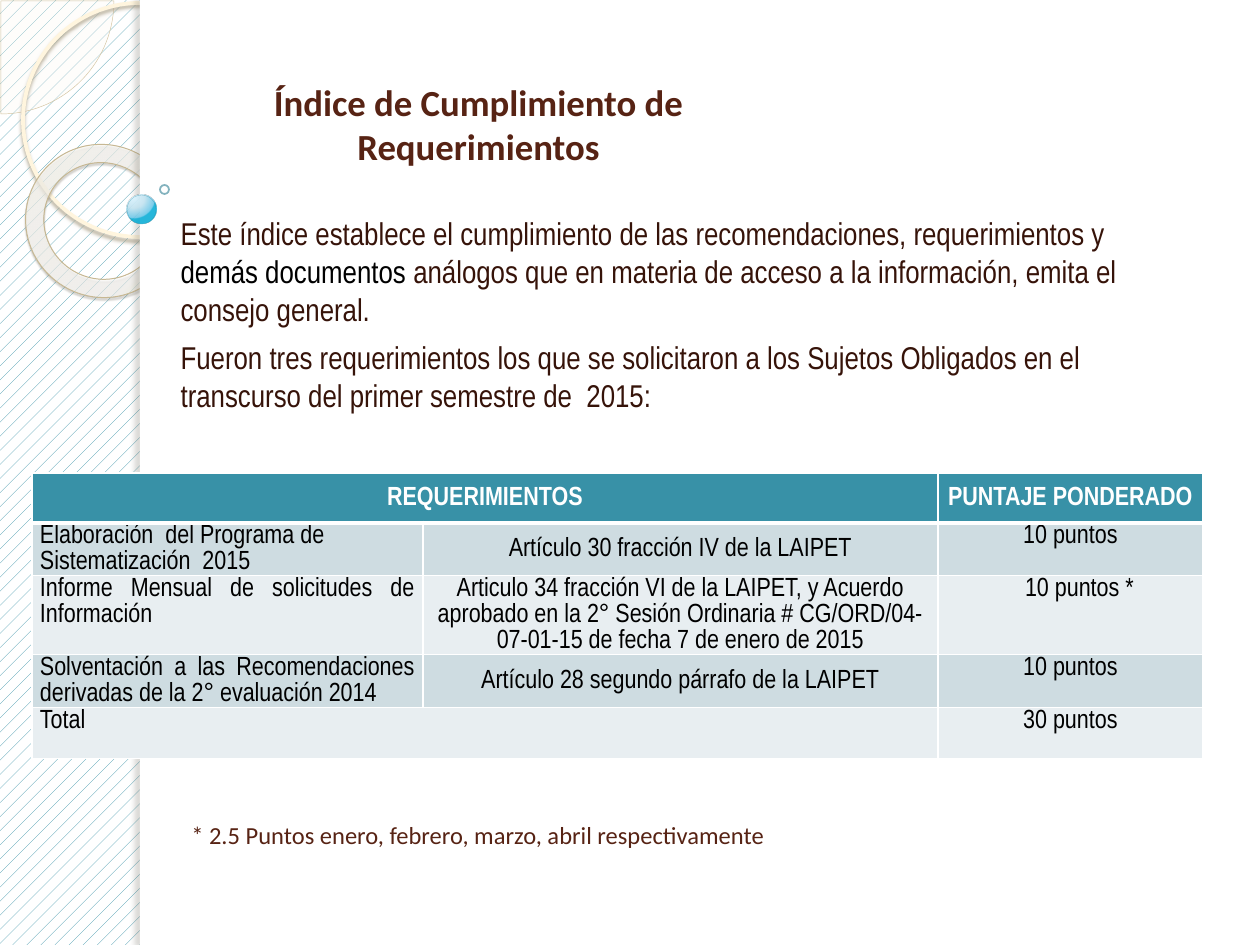
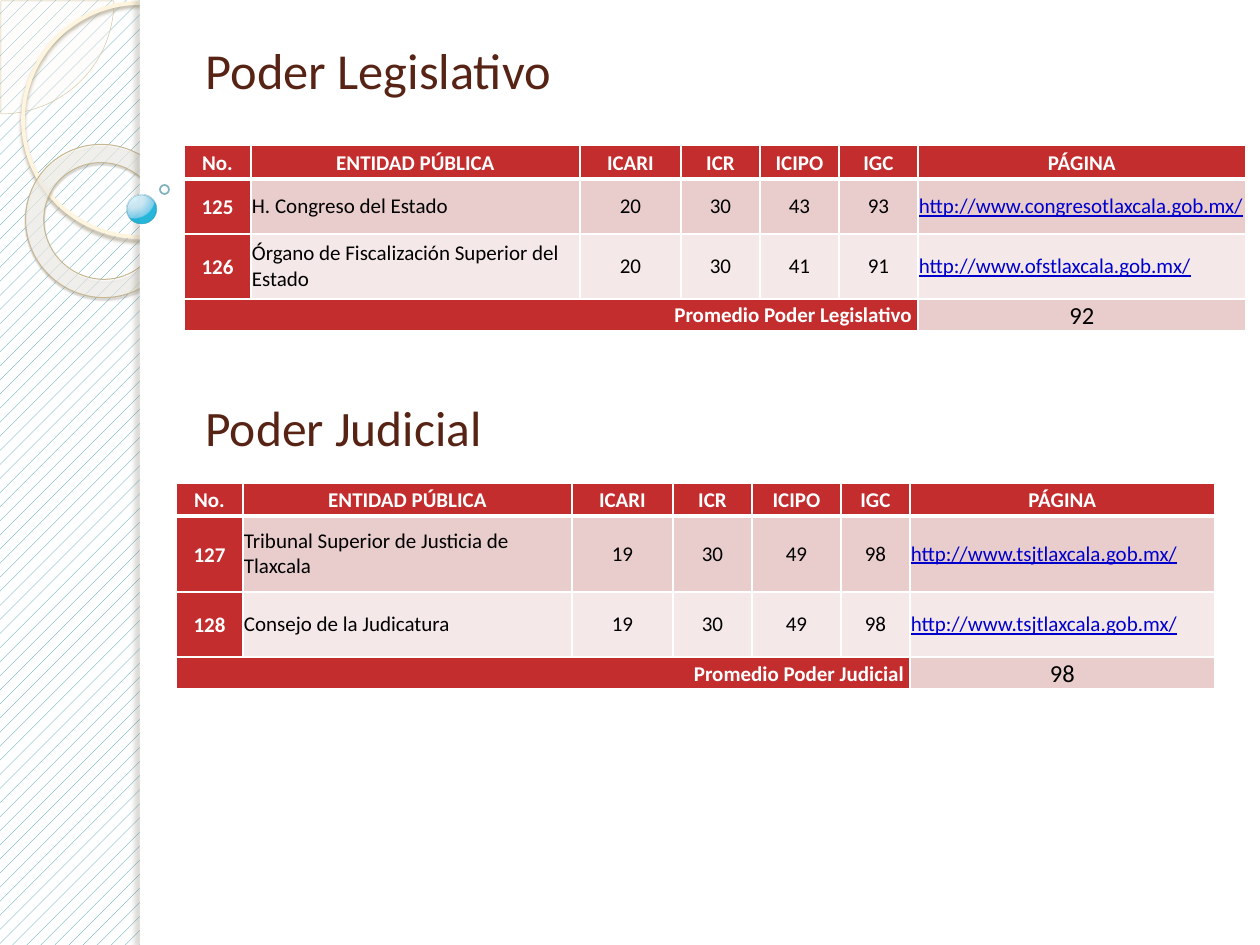
"""Build two slides on the compliance index and the scores of two branches of government."""
from lxml.etree import SubElement
from pptx import Presentation
from pptx.dml.color import RGBColor
from pptx.enum.dml import MSO_PATTERN
from pptx.enum.shapes import MSO_SHAPE
from pptx.enum.text import MSO_ANCHOR, MSO_AUTO_SIZE, PP_ALIGN
from pptx.oxml import parse_xml
from pptx.oxml.ns import nsdecls, qn
from pptx.util import Pt

SCALE = 914400 / 126
BROWN, DARK_BROWN, BLACK, WHITE = "572314", "361309", "000000", "FFFFFF"
TEAL, RED, LINK = "3891A7", "C32D2E", "0000CC"
TEAL_BANDS, RED_BANDS = ("CEDCE1", "E8EEF1"), ("E9CDCD", "F5E8E8")
NARROW, SANS = "Arial Narrow", "Calibri"
TABLE_SPACING = 1.07
LEFT, CENTER, RIGHT, JUSTIFY = PP_ALIGN.LEFT, PP_ALIGN.CENTER, PP_ALIGN.RIGHT, PP_ALIGN.JUSTIFY
TOP, MIDDLE, BOTTOM = MSO_ANCHOR.TOP, MSO_ANCHOR.MIDDLE, MSO_ANCHOR.BOTTOM

DECORATIONS = [
    dict(kind=MSO_SHAPE.PIE, box=(-112, -112, 226, 226), adjust=(0, 54.02),
         fill="FEFAF4", opacity=33, line=("D3C39F", 0.25, 100)),
    dict(kind=MSO_SHAPE.OVAL, box=(23, 3, 234, 234), line=("FFF5DE", 2.15, 100),
         shadow=("B0A68F", 85, 2, 2, 90)),
    dict(kind=MSO_SHAPE.DONUT, box=(25, 145, 155, 152), adjust=(0.12,), rotation=38.6,
         gradient=[(0, "FFFCF6", 70), (70, "FFFEFB", 55), (100, "F0D28E", 60)],
         focus=(-408, -50, 508, 150), line=("C7B893", 0.58, 100),
         shadow=("5A5444", 35, 1, 1.2, 75)),
    dict(kind=MSO_SHAPE.RECTANGLE, box=(140, 0, 1120, 945), fill=WHITE),
    dict(kind=MSO_SHAPE.RECTANGLE, box=(140, 0, 10, 945), fill=WHITE,
         shadow=("736F63", 25, 3, 3, 180)),
    dict(kind=MSO_SHAPE.OVAL, box=(127, 195, 29, 29),
         gradient=[(0, "DAF4FF", 95), (50, "C3E3F0", 90), (95, "6BC7E8", 88), (100, "00ABD5", 85)],
         focus=(25, 12, 75, 88), line=("308EA5", 0.16, 60)),
    dict(kind=MSO_SHAPE.OVAL, box=(160, 185, 9, 9), line=("318093", 1, 60)),
]

INDEX_TITLE = "Índice de Cumplimiento de Requerimientos"
INDEX_BODY = [
    [("Este índice establece el cumplimiento de las recomendaciones, requerimientos y ", DARK_BROWN),
     ("demás documentos ", BLACK),
     ("análogos que en materia de acceso a la información, emita el consejo general.", DARK_BROWN)],
    [("Fueron tres requerimientos los que se solicitaron a los Sujetos Obligados en el "
      "transcurso del primer semestre de  2015:", DARK_BROWN)],
]
REQUIREMENTS = [
    ("REQUERIMIENTOS", None, "PUNTAJE PONDERADO"),
    ("Elaboración  del Programa de Sistematización  2015",
     "Artículo 30 fracción IV de la LAIPET", "10 puntos"),
    ("Informe Mensual de solicitudes de Información",
     "Articulo 34 fracción VI de la LAIPET, y Acuerdo aprobado en la 2° Sesión Ordinaria "
     "# CG/ORD/04-07-01-15 de fecha 7 de enero de 2015", "10 puntos *"),
    ("Solventación a las Recomendaciones derivadas de la 2° evaluación 2014",
     "Artículo 28 segundo párrafo de la LAIPET", "10 puntos"),
    ("Total", None, "30 puntos"),
]
FOOTNOTE = "* 2.5 Puntos enero, febrero, marzo, abril respectivamente"

SCORE_HEADER = ("No.", "ENTIDAD PÚBLICA", "ICARI", "ICR", "ICIPO", "IGC", "PÁGINA")
BRANCHES = [
    dict(title="Poder Legislativo", title_top=27, size=28.8, place=(184, 145),
         widths=(67, 329, 101, 79, 79, 79, 328), heights=(34, 55, 65, 32), average="92",
         entities=[
             ("125", "H. Congreso del Estado", "20", "30", "43", "93",
              "http://www.congresotlaxcala.gob.mx/"),
             ("126", "Órgano de Fiscalización Superior del Estado", "20", "30", "41", "91",
              "http://www.ofstlaxcala.gob.mx/")]),
    dict(title="Poder Judicial", title_top=384, size=28.3, place=(176, 483),
         widths=(67, 329, 101, 79, 89, 69, 305), heights=(33, 76, 65, 32), average="98",
         entities=[
             ("127", "Tribunal Superior de Justicia de Tlaxcala", "19", "30", "49", "98",
              "http://www.tsjtlaxcala.gob.mx/"),
             ("128", "Consejo de la Judicatura", "19", "30", "49", "98",
              "http://www.tsjtlaxcala.gob.mx/")]),
]


def px(length):
    return round(length * SCALE)


def color(value):
    return RGBColor.from_string(value)


def color_xml(value, opacity):
    return f'<a:srgbClr val="{value}"><a:alpha val="{opacity * 1000}"/></a:srgbClr>'


def gradient_xml(stops, focus):
    stop_list = "".join(f'<a:gs pos="{position * 1000}">{color_xml(value, opacity)}</a:gs>'
                        for position, value, opacity in stops)
    sides = " ".join(f'{side}="{percent * 1000}"' for side, percent in zip("ltrb", focus))
    return (f'<a:gradFill {nsdecls("a")} rotWithShape="1"><a:gsLst>{stop_list}</a:gsLst>'
            f'<a:path path="circle"><a:fillToRect {sides}/></a:path></a:gradFill>')


def shadow_xml(value, opacity, blur, distance, direction):
    return (f'<a:outerShdw {nsdecls("a")} blurRad="{Pt(blur)}" dist="{Pt(distance)}" '
            f'dir="{direction * 60000}" algn="tl" rotWithShape="0">'
            f'{color_xml(value, opacity)}</a:outerShdw>')


def set_opacity(fill_parent, opacity):
    rgb = fill_parent.find(".//" + qn("a:srgbClr"))
    SubElement(rgb, qn("a:alpha")).set("val", str(opacity * 1000))


def draw_decoration(slide, kind, box, adjust=(), rotation=0, fill=None, opacity=100,
                    gradient=None, focus=None, line=None, shadow=None):
    shape = slide.shapes.add_shape(kind, *map(px, box))
    shape.rotation = rotation
    for index, value in enumerate(adjust):
        shape.adjustments[index] = value
    properties = shape.element.spPr
    if fill:
        shape.fill.solid()
        shape.fill.fore_color.rgb = color(fill)
        set_opacity(properties.find(qn("a:solidFill")), opacity)
    elif gradient:
        properties.find(qn("a:prstGeom")).addnext(parse_xml(gradient_xml(gradient, focus)))
    else:
        shape.fill.background()
    if line:
        line_color, width, line_opacity = line
        shape.line.color.rgb = color(line_color)
        shape.line.width = Pt(width)
        set_opacity(properties.find(qn("a:ln")), line_opacity)
    else:
        shape.line.fill.background()
    shape.shadow.inherit = False
    if shadow:
        properties.find(qn("a:effectLst")).append(parse_xml(shadow_xml(*shadow)))
    return shape


def decorate_master(presentation, slide):
    """Set the shared background and move the decorations to the master."""
    master = presentation.slide_master
    background = master.background.fill
    background.patterned()
    background.pattern = MSO_PATTERN.PERCENT_10
    background.fore_color.rgb = color(TEAL)
    background.back_color.rgb = color(WHITE)
    for number, decoration in enumerate(DECORATIONS, 101):
        element = draw_decoration(slide, **decoration).element
        element.nvSpPr.cNvPr.set("id", str(number))
        master.shapes.element.append(element)


def place(shape, box):
    shape.left, shape.top, shape.width, shape.height = map(px, box)
    shape.text_frame.word_wrap = True
    shape.text_frame.auto_size = MSO_AUTO_SIZE.NONE


def format_run(run, size, font, value, bold=False, underline=False):
    run.font.size, run.font.name = Pt(size), font
    run.font.bold, run.font.underline = bold, underline
    run.font.color.rgb = color(value)


def write(text_frame, text, size, font, value, bold=False, underline=False,
          align=LEFT, spacing=1.0):
    text_frame.text = text
    paragraph = text_frame.paragraphs[0]
    paragraph.alignment, paragraph.line_spacing = align, spacing
    format_run(paragraph.runs[0], size, font, value, bold, underline)


def write_heading(shape, box, text, size, **options):
    place(shape, box)
    shape.text_frame.vertical_anchor = BOTTOM
    write(shape.text_frame, text, size, SANS, BROWN, **options)


def add_text_box(slide):
    return slide.shapes.add_textbox(0, 0, 0, 0)


def write_body(shape, box, paragraphs):
    place(shape, box)
    frame = shape.text_frame
    frame.vertical_anchor, frame.margin_top = TOP, 0
    for index, pieces in enumerate(paragraphs):
        paragraph = frame.add_paragraph() if index else frame.paragraphs[0]
        paragraph.space_before = Pt(6)
        properties = paragraph._p.get_or_add_pPr()
        properties.set("marL", "0")
        properties.set("indent", "0")
        SubElement(properties, qn("a:buNone"))
        for text, value in pieces:
            run = paragraph.add_run()
            run.text = text
            format_run(run, 18, NARROW, value)


def set_borders(cell, row):
    properties = cell._tc.get_or_add_tcPr()
    widths = dict(L=1, R=1, T=3 if row == 1 else 1, B=3 if row == 0 else 1)
    for position, (side, width) in enumerate(widths.items()):
        properties.insert(position, parse_xml(
            f'<a:ln{side} {nsdecls("a")} w="{Pt(width)}"><a:solidFill>'
            f'{color_xml(WHITE, 100)}</a:solidFill></a:ln{side}>'))


def add_table(slide, left, top, widths, heights, rows, style_of):
    """Add a table whose None cells are merged into the cell on their left."""
    frame = slide.shapes.add_table(len(rows), len(widths), px(left), px(top),
                                   px(sum(widths)), px(sum(heights)))
    table = frame.table
    for column, width in zip(table.columns, widths):
        column.width = px(width)
    for table_row, height in zip(table.rows, heights):
        table_row.height = px(height)
    for row, texts in enumerate(rows):
        for column, text in enumerate(texts):
            cell = table.cell(row, column)
            fill, anchor, margins, text_style = style_of(row, column)
            cell.fill.solid()
            cell.fill.fore_color.rgb = color(fill)
            set_borders(cell, row)
            if text is None:
                continue
            cell.vertical_anchor = anchor
            cell.margin_left, cell.margin_right = map(px, margins)
            cell.margin_top = cell.margin_bottom = 0
            write(cell.text_frame, text, **text_style)
        if None in texts:
            start = texts.index(None) - 1
            table.cell(row, start).merge(table.cell(row, start + texts.count(None)))


def requirement_style(row, column):
    header = row == 0
    fill = TEAL if header else TEAL_BANDS[(row - 1) % 2]
    anchor = MIDDLE if header or column == 1 else TOP
    align = CENTER if header or column else (LEFT if row == 1 else JUSTIFY)
    margins = (26, 8) if (row, column) == (2, 2) else (8, 8)
    return fill, anchor, margins, dict(size=15, font=NARROW, value=WHITE if header else BLACK,
                                       bold=header, align=align, spacing=TABLE_SPACING)


def score_style(row, column):
    average, page = row == 3, column == 6
    strong = row == 0 or column == 0 or (average and not page)
    fill = RED if strong else RED_BANDS[(row - 1) % 2]
    link = page and row in (1, 2)
    if average and not page:
        align = RIGHT
    else:
        align = LEFT if row in (1, 2) and column in (1, 6) else CENTER
    margins = (6, 6) if column == 0 or average else (1, 1)
    return fill, MIDDLE, margins, dict(
        size=14 if average and page else 12, font=SANS, bold=strong, underline=link,
        value=WHITE if strong else LINK if link else BLACK, align=align,
        spacing=TABLE_SPACING if strong or average else 1.0)


def build_index_slide(slide):
    title, body = slide.placeholders
    write_heading(title, (164, 86, 629, 88), INDEX_TITLE, 21, bold=True, align=CENTER)
    write_body(body, (168, 214, 982, 258), INDEX_BODY)
    add_table(slide, 32, 473, (391, 515, 265), (50, 52, 79, 53, 51),
              REQUIREMENTS, requirement_style)
    write_heading(add_text_box(slide), (141, 797, 674, 59), FOOTNOTE, 14, align=CENTER)


def build_scores_slide(slide):
    headings = [slide.shapes.title, add_text_box(slide)]
    for heading, branch in zip(headings, BRANCHES):
        write_heading(heading, (193, branch["title_top"], 466, 79),
                      branch["title"], branch["size"])
        average = ("Promedio " + branch["title"], *[None] * 5, branch["average"])
        add_table(slide, *branch["place"], branch["widths"], branch["heights"],
                  [SCORE_HEADER, *branch["entities"], average], score_style)


def main():
    presentation = Presentation()
    presentation.slide_width, presentation.slide_height = px(1260), px(945)
    layouts = presentation.slide_layouts
    index_slide = presentation.slides.add_slide(layouts.get_by_name("Title and Content"))
    scores_slide = presentation.slides.add_slide(layouts.get_by_name("Title Only"))
    decorate_master(presentation, index_slide)
    build_index_slide(index_slide)
    build_scores_slide(scores_slide)
    presentation.save("out.pptx")


if __name__ == "__main__":
    main()
